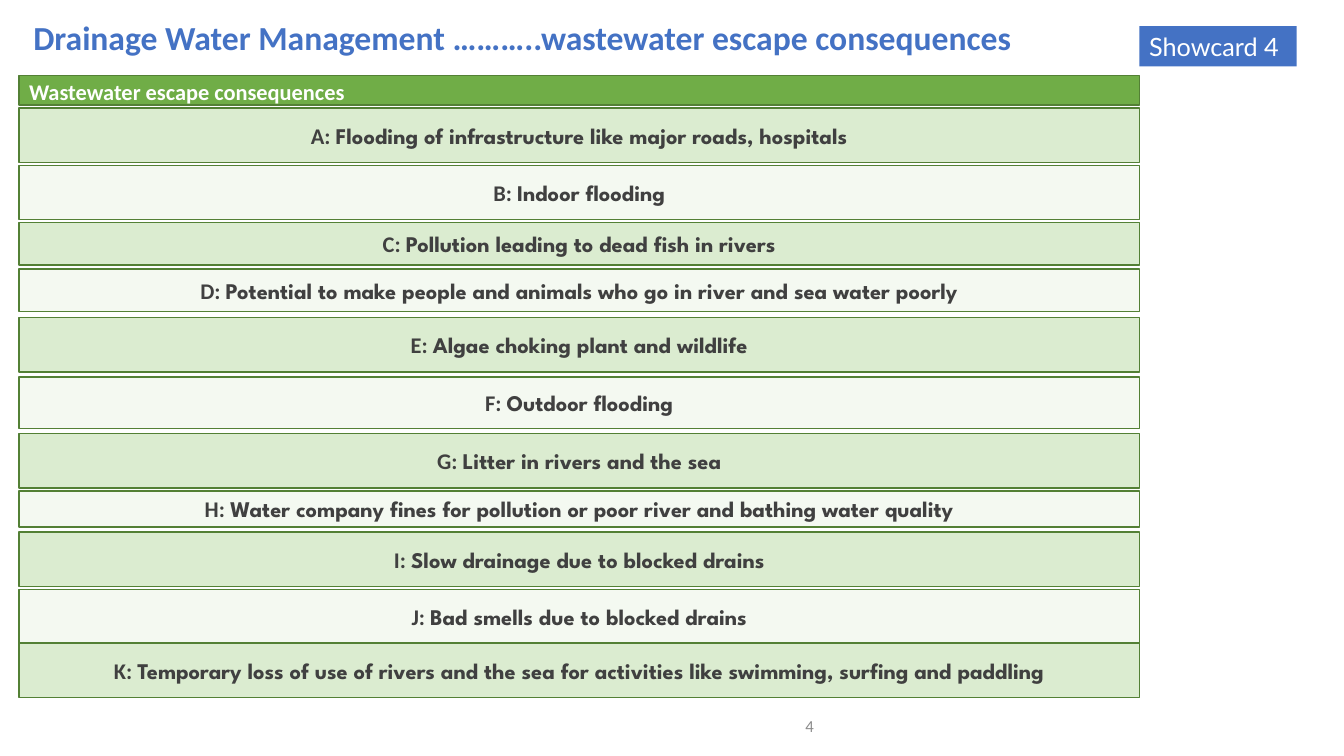
from pptx import Presentation
from pptx.dml.color import RGBColor
from pptx.enum.shapes import MSO_SHAPE
from pptx.enum.text import MSO_ANCHOR, MSO_AUTO_SIZE, PP_ALIGN
from pptx.util import Inches, Pt

BLUE = RGBColor(0x44, 0x72, 0xC4)
GREEN = RGBColor(0x70, 0xAD, 0x47)
EDGE = RGBColor(0x53, 0x80, 0x35)
TINT = RGBColor(0xDB, 0xEC, 0xD0)
PALE = RGBColor(0xF4, 0xF9, 0xF1)
DARK = RGBColor(0x40, 0x40, 0x40)
GREY = RGBColor(0x8C, 0x8C, 0x8C)
WHITE = RGBColor(0xFF, 0xFF, 0xFF)

LEFT, WIDTH = 0.19, 11.11
ROWS = [
    (1.07, 0.54, "Flooding of infrastructure like major roads, hospitals"),
    (1.64, 0.54, "Indoor flooding"),
    (2.21, 0.42, "Pollution leading to dead fish in rivers"),
    (2.67, 0.42, "Potential to make people and animals who go in river and sea water poorly"),
    (3.15, 0.54, "Algae choking plant and wildlife"),
    (3.74, 0.51, "Outdoor flooding"),
    (4.3, 0.54, "Litter in rivers and the sea"),
    (4.87, 0.36, "Water company fines for pollution or poor river and bathing water quality"),
    (5.28, 0.54, "Slow drainage due to blocked drains"),
    (5.85, 0.54, "Bad smells due to blocked drains"),
    (6.38, 0.54, "Temporary loss of use of rivers and the sea for activities "
                 "like swimming, surfing and paddling"),
]


class Card:
    """Hold the style and the current slide of the showcard."""

    def __init__(self, deck):
        self.slide = deck.slides.add_slide(deck.slide_layouts[5])
        self.face = "Calibri"
        self.accent = "League Spartan"

    def label(self, shape, text, size, color, bold=False, face=None,
              align=PP_ALIGN.LEFT, anchor=MSO_ANCHOR.MIDDLE):
        frame = shape.text_frame
        frame.word_wrap = True
        frame.vertical_anchor = anchor
        para = frame.paragraphs[0]
        para.text = text
        para.alignment = align
        font = para.font
        font.name = face or self.face
        font.size = Pt(size)
        font.bold = bold
        font.color.rgb = color
        return para

    def title(self, text, left, top, width, height):
        shape = self.slide.shapes.title
        shape.left, shape.top = Inches(left), Inches(top)
        shape.width, shape.height = Inches(width), Inches(height)
        para = self.label(shape, text, 24, BLUE, bold=True)
        para.line_spacing = 0.9
        shape.text_frame.auto_size = MSO_AUTO_SIZE.NONE

    def box(self, left, top, width, height, fill, edge=None):
        shape = self.slide.shapes.add_shape(
            MSO_SHAPE.RECTANGLE, Inches(left), Inches(top), Inches(width), Inches(height))
        shape.shadow.inherit = False
        shape.fill.solid()
        shape.fill.fore_color.rgb = fill
        if edge is None:
            shape.line.fill.background()
        else:
            shape.line.color.rgb = edge
            shape.line.width = Pt(1)
        return shape

    def badge(self, text, left, top, width, height):
        shape = self.box(left, top, width, height, BLUE)
        self.label(shape, text, 18, WHITE, face="Lato", anchor=MSO_ANCHOR.TOP)
        shape.text_frame.auto_size = MSO_AUTO_SIZE.SHAPE_TO_FIT_TEXT

    def header(self, text, top, height):
        shape = self.box(LEFT, top, WIDTH, height, GREEN, EDGE)
        para = self.label(shape, text, 16, WHITE, bold=True)
        para.line_spacing = 1.07
        para.space_after = Pt(8)

    def row(self, mark, text, top, height, fill):
        shape = self.box(LEFT, top, WIDTH, height, fill, EDGE)
        para = self.label(shape, f"{mark}: ", 16, DARK, bold=True, align=PP_ALIGN.CENTER)
        run = para.add_run()
        run.text = text
        run.font.name = self.accent

    def number(self, text, left, top, width, height):
        shape = self.slide.shapes.add_textbox(
            Inches(left), Inches(top), Inches(width), Inches(height))
        self.label(shape, text, 12, GREY, align=PP_ALIGN.RIGHT)


def main():
    deck = Presentation()
    deck.slide_width, deck.slide_height = Inches(13.33), Inches(7.5)
    card = Card(deck)
    card.number("4", 5.17, 7, 3, 0.4)
    card.title("Drainage Water Management ………..wastewater escape consequences",
               0.23, 0.05, 11.5, 0.69)
    card.badge("Showcard 4", 11.3, 0.26, 1.56, 0.4)
    card.header("Wastewater escape consequences", 0.75, 0.29)
    for i, (top, height, text) in enumerate(ROWS):
        card.row("ABCDEFGHIJK"[i], text, top, height, PALE if i % 2 else TINT)
    deck.save("out.pptx")


if __name__ == "__main__":
    main()
